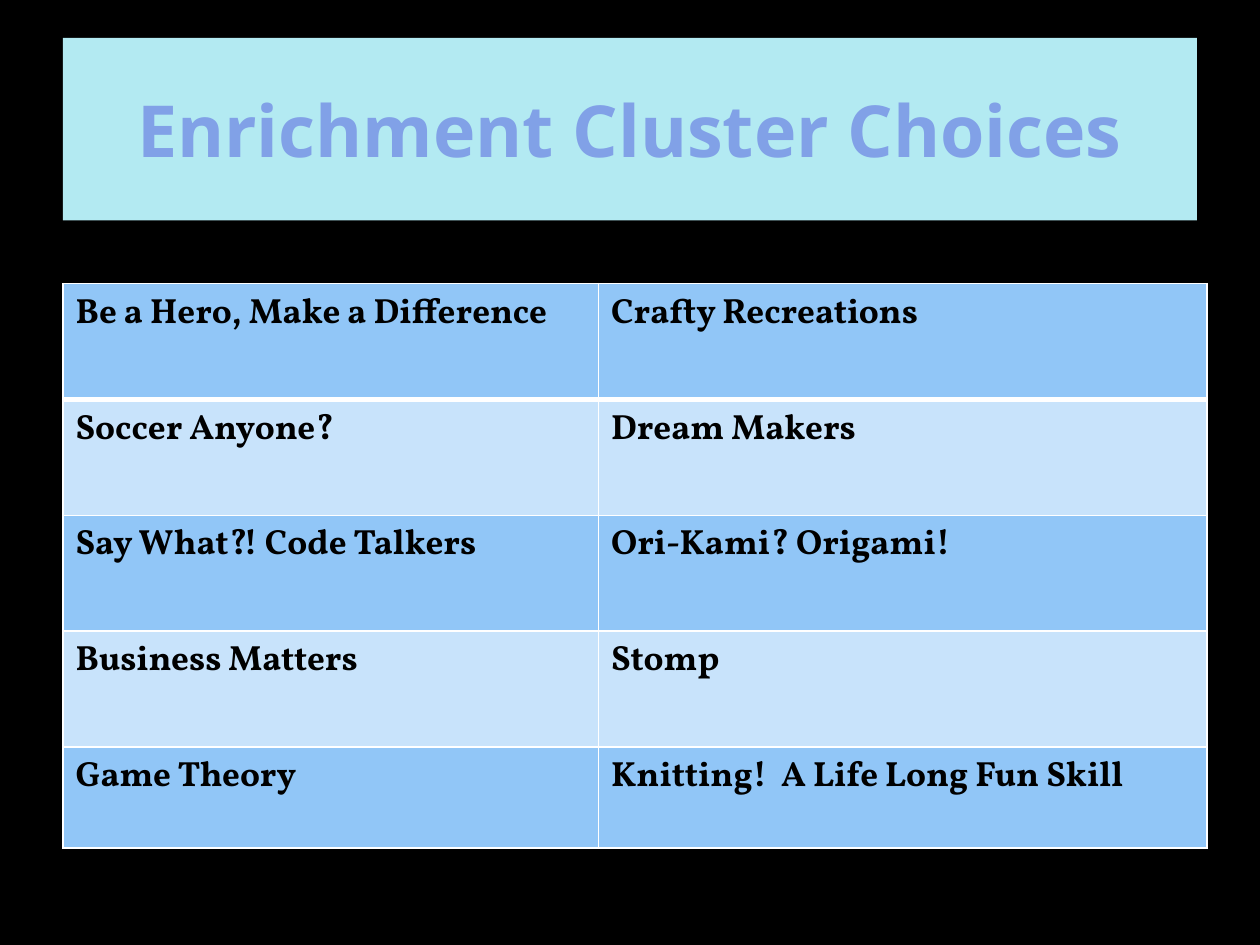
from lxml import etree
from pptx import Presentation
from pptx.dml.color import RGBColor
from pptx.enum.shapes import MSO_SHAPE
from pptx.enum.text import MSO_ANCHOR, PP_ALIGN
from pptx.oxml.ns import qn
from pptx.util import Inches, Pt

RECT = MSO_SHAPE.RECTANGLE
MIDDLE = MSO_ANCHOR.MIDDLE
CENTER = PP_ALIGN.CENTER

TITLE = "Enrichment Cluster Choices"
CLUSTERS = [
    ("Be a Hero, Make a Difference", "Crafty Recreations"),
    ("Soccer Anyone?", "Dream Makers"),
    ("Say What?! Code Talkers", "Ori-Kami? Origami!"),
    ("Business Matters", "Stomp"),
    ("Game Theory", "Knitting!  A Life Long Fun Skill"),
]
COL_WIDTHS = [4.25, 4.83]
ROW_HEIGHTS = [0.92] * 4 + [0.8]
COLORS = {
    "background": "000000",
    "banner": "B3EAF2",
    "title": "81A1E7",
    "odd_row": "91C6F7",
    "even_row": "C8E3FB",
    "text": "000000",
    "border": "FFFFFF",
}


def rgb(name):
    return RGBColor.from_string(COLORS[name])


def paint(fill, name):
    fill.solid()
    fill.fore_color.rgb = rgb(name)


def style_text(p, font, size, color):
    for r in p.runs:
        r.font.name = font
        r.font.size = Pt(size)
        r.font.bold = True
        r.font.color.rgb = rgb(color)


def add_borders(cell, widths):
    tc_pr = cell._tc.get_or_add_tcPr()
    for side, width in widths.items():
        ln = etree.SubElement(tc_pr, qn(f"a:ln{side}"), w=str(Pt(width)))
        fill = etree.SubElement(ln, qn("a:solidFill"))
        etree.SubElement(fill, qn("a:srgbClr"), val=COLORS["border"])


def add_banner(s):
    sp = s.shapes.add_shape(RECT, Inches(0.5), Inches(0.3), Inches(9), Inches(1.45))
    sp.shadow.inherit = False
    paint(sp.fill, "banner")
    sp.line.fill.background()
    tf = sp.text_frame
    tf.text = TITLE
    tf.word_wrap = True
    tf.vertical_anchor = MIDDLE
    p = tf.paragraphs[0]
    p.alignment = CENTER
    style_text(p, "Noto Sans", 41, "title")


def add_cluster_table(s):
    table = s.shapes.add_table(
        len(CLUSTERS), len(COL_WIDTHS), Inches(0.5), Inches(2.25),
        Inches(sum(COL_WIDTHS)), Inches(sum(ROW_HEIGHTS)),
    ).table
    for col, width in zip(table.columns, COL_WIDTHS):
        col.width = Inches(width)
    for row, height in zip(table.rows, ROW_HEIGHTS):
        row.height = Inches(height)
    for i, names in enumerate(CLUSTERS):
        top = 3 if i == 1 else 1
        bottom = 3 if i == 0 else 1
        for j, name in enumerate(names):
            cell = table.cell(i, j)
            cell.text = name
            style_text(cell.text_frame.paragraphs[0], "Vollkorn", 20, "text")
            add_borders(cell, {"L": 1, "R": 1, "T": top, "B": bottom})
            paint(cell.fill, "even_row" if i % 2 else "odd_row")


def main():
    prs = Presentation()
    prs.slide_width, prs.slide_height = Inches(10), Inches(7.5)
    s = prs.slides.add_slide(prs.slide_layouts[6])
    paint(s.background.fill, "background")
    add_banner(s)
    add_cluster_table(s)
    prs.save("out.pptx")


if __name__ == "__main__":
    main()
